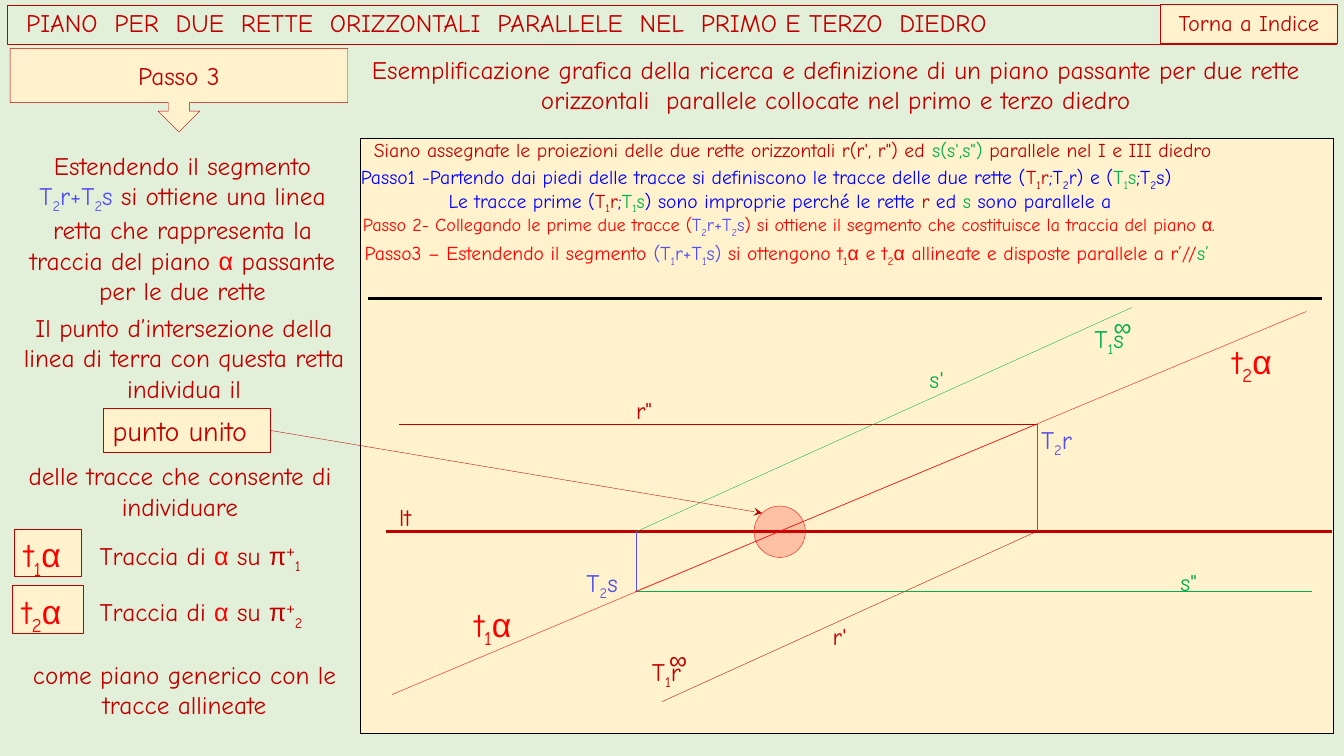
from itertools import groupby

from lxml import etree
from pptx import Presentation
from pptx import util as u
from pptx.dml.color import RGBColor
from pptx.enum import shapes, text
from pptx.oxml import ns

# Grid: every length is a number of columns or rows, ten to the inch
CELL = u.Inches(0.1)
COLUMNS, ROWS = 133.33, 75

PALE_GREEN = RGBColor(0xE2, 0xF0, 0xD9)
CREAM = RGBColor(0xFF, 0xF2, 0xCC)
DARK_RED = RGBColor(0xC0, 0x00, 0x00)
RED = RGBColor(0xFF, 0x00, 0x00)
GREEN = RGBColor(0x00, 0xB0, 0x50)
VIOLET = RGBColor(0x54, 0x50, 0xEE)
BLUE = RGBColor(0x00, 0x00, 0xFF)
BLACK = RGBColor(0x00, 0x00, 0x00)

FONT, SYMBOL_FONT = "Comic Neue", "Arial"
SYMBOLS = "απ∞"
BASELINES = {"_": -25000, "^": 30000}  # marks before a lowered or raised character
THIN = 0.25
LEFT, CENTER = text.PP_ALIGN.LEFT, text.PP_ALIGN.CENTER


def grid(*cells):
    return [round(cell * CELL) for cell in cells]


def styled_pieces(marked):
    """Split marked text into (text, font name, baseline) pieces."""
    characters, baseline = [], 0
    for character in marked:
        if character in BASELINES:
            baseline = BASELINES[character]
            continue
        font = SYMBOL_FONT if character in SYMBOLS or baseline > 0 else FONT
        characters.append((character, font, baseline))
        baseline = 0
    for (font, baseline), piece in groupby(characters, key=lambda item: item[1:]):
        yield "".join(item[0] for item in piece), font, baseline


def write(shape, parts, size, align=LEFT, anchor=text.MSO_ANCHOR.TOP, grow=True, wrap=True):
    """Fill a shape with (marked text, colour) parts."""
    frame = shape.text_frame
    frame.word_wrap = wrap
    frame.vertical_anchor = anchor
    frame.auto_size = (text.MSO_AUTO_SIZE.SHAPE_TO_FIT_TEXT if grow
                       else text.MSO_AUTO_SIZE.NONE)
    paragraph = frame.paragraphs[0]
    paragraph.alignment = align
    for marked, color in parts:
        for piece, font, baseline in styled_pieces(marked):
            run = paragraph.add_run()
            run.text = piece
            run.font.name = font
            run.font.size = u.Pt(size)
            run.font.color.rgb = color
            if baseline:
                run._r.get_or_add_rPr().set("baseline", str(baseline))


def add_label(parent, box, parts, size=18, align=LEFT, inset=True, wrap=True):
    label = parent.add_textbox(*grid(*box))
    if not inset:
        frame = label.text_frame
        frame.margin_left = frame.margin_right = frame.margin_top = frame.margin_bottom = 0
    write(label, parts, size, align, wrap=wrap)


def add_panel(parent, kind, box, fill=CREAM, line=DARK_RED, width=THIN):
    panel = parent.add_shape(kind, *grid(*box))
    panel.shadow.inherit = False
    panel.fill.solid()
    panel.fill.fore_color.rgb = fill
    panel.line.color.rgb = line
    panel.line.width = u.Pt(width)
    return panel


def add_line(parent, start, end, color, width=THIN):
    line = parent.add_connector(shapes.MSO_CONNECTOR.STRAIGHT, *grid(*start, *end))
    line.line.color.rgb = color
    line.line.width = u.Pt(width)
    etree.SubElement(line._element.spPr, ns.qn("a:effectLst"))
    return line


def add_header(slide):
    title = slide.shapes.title
    title.left, title.top, title.width, title.height = grid(0.7, 0.5, 131.9, 3.9)
    title.line.color.rgb = DARK_RED
    title.line.width = u.Pt(THIN)
    title.text_frame.margin_left = round(1.9 * CELL)
    write(title, [("PIANO  PER  DUE  RETTE  ORIZZONTALI  PARALLELE  NEL  PRIMO E TERZO  DIEDRO",
                   DARK_RED)], 18, anchor=text.MSO_ANCHOR.MIDDLE, grow=False)
    title.text_frame.paragraphs[0].line_spacing = 0.9

    step = add_panel(slide.shapes, shapes.MSO_SHAPE.DOWN_ARROW_CALLOUT, (1, 4.8, 33.5, 8.3))
    write(step, [("Passo 3", DARK_RED)], 18, CENTER, text.MSO_ANCHOR.MIDDLE, grow=False)
    index = add_panel(slide.shapes, shapes.MSO_SHAPE.RECTANGLE, (115.1, 0.4, 17.6, 3.9))
    write(index, [("Torna a Indice", DARK_RED)], 16, CENTER)
    add_label(slide.shapes, (33.7, 4.9, 98.4, 7.1), [
        ("Esemplificazione grafica della ricerca e definizione di un piano passante per due "
         "rette orizzontali  parallele collocate nel primo e terzo diedro", DARK_RED)],
        align=CENTER)


def add_explanation(slide):
    """Left column; returns the box from which the arrow starts."""
    paragraphs = [
        ((0.7, 14.4, 34.8, 16.2), [
            ("Estendendo il segmento ", DARK_RED), ("T_2r+T_2s ", VIOLET),
            ("si ottiene una linea retta che rappresenta la traccia del piano ", DARK_RED),
            ("α", RED), (" passante per le due rette", DARK_RED)]),
        ((1, 30.5, 34.5, 13.1), [
            ("Il punto d’intersezione della linea di terra con questa retta individua il",
             DARK_RED)]),
        ((0.6, 45.2, 34.5, 7.1), [("delle tracce che consente di individuare", DARK_RED)]),
        ((1.4, 64.9, 33.8, 7.1), [("come piano generico con le tracce allineate", DARK_RED)]),
    ]
    for box, parts in paragraphs:
        add_label(slide.shapes, box, parts, align=CENTER)

    # The two traces and their meaning
    for number, left, width in ((1, 1.4, 6.7), (2, 1.2, 7.1)):
        top = 46.9 + 5.6 * number
        trace = add_panel(slide.shapes, shapes.MSO_SHAPE.RECTANGLE, (left, top, width, 4.7))
        write(trace, [(f"t_{number}α", RED)], 24)
        add_label(slide.shapes, (8.9, top + 0.6, 27.3, 4.1), [
            ("Traccia di ", DARK_RED), ("α", RED), (f" su π^+_{number}", DARK_RED)])

    point = add_panel(slide.shapes, shapes.MSO_SHAPE.RECTANGLE, (10.2, 40.5, 16.6, 4.4))
    write(point, [("punto unito", DARK_RED)], 20)
    return point


def add_steps(parent):
    add_label(parent, (37.1, 13.7, 93.4, 2.4), [
        ("Siano assegnate le proiezioni delle due rette orizzontali r(r', r\") ed ", DARK_RED),
        ("s(s',s\") ", GREEN), ("parallele nel I e III diedro", DARK_RED)],
        14, inset=False, wrap=False)
    add_label(parent, (35.8, 16.4, 94, 2.4), [
        ("Passo1 -Partendo dai piedi delle tracce si definiscono le tracce delle due rette (",
         BLUE), ("T_1r", DARK_RED), (";T_2r) e (", BLUE), ("T_1s", GREEN), (";T_2s)", BLUE)],
        14, inset=False)
    add_label(parent, (44.5, 18.7, 80.1, 2.4), [
        ("Le tracce prime (", BLUE), ("T_1r", DARK_RED), (";", BLUE), ("T_1s", GREEN),
        (") sono improprie perché le rette ", BLUE), ("r", DARK_RED), (" ed ", BLUE),
        ("s", GREEN), (" sono parallele a", BLUE)], 14, inset=False)
    add_label(parent, (36, 21.2, 95.5, 2.2), [
        ("Passo 2- Collegando le prime due tracce (", RED), ("T_2r+T_2s", VIOLET),
        (") si ottiene il segmento che costituisce la traccia del piano α.", RED)],
        13, inset=False)
    add_label(parent, (35.2, 23.4, 94.4, 3.4), [
        ("Passo3 – Estendendo il segmento ", RED), ("(T_1r+T_1s) ", VIOLET),
        ("si ottengono t_1α e t_2α allineate e disposte parallele a r’//", RED),
        ("s’", GREEN)], 14)


def add_projections(parent):
    # Ground line, projections of r and s, and the segment joining their traces
    for start, end, color, width in (
            ((131.2, 29.6), (36.5, 29.6), BLACK, 0),
            ((38.3, 52.7), (132.1, 52.7), DARK_RED, 0),
            ((39.6, 42.1), (102.9, 42.1), DARK_RED, THIN),
            ((102.9, 42.1), (102.9, 52.7), VIOLET, THIN),
            ((102.9, 52.7), (65.7, 69.6), DARK_RED, THIN),
            ((63.1, 58.7), (130.2, 58.7), GREEN, THIN),
            ((63.1, 58.7), (63.1, 52.8), VIOLET, THIN),
            ((112.3, 30.5), (63, 52.8), GREEN, THIN),
            ((63, 58.7), (102.8, 42.1), RED, THIN)):
        add_line(parent, start, end, color, width)

    for name, left, top, color in (
            ("r\"", 63.1, 39.3, DARK_RED), ("r'", 82.6, 61.7, DARK_RED),
            ("s\"", 117.1, 56.3, GREEN), ("s'", 92.2, 36.2, GREEN),
            ("lt", 39.6, 49.9, DARK_RED)):
        add_label(parent, (left, top, 2.2, 2.9), [(name, color)], 17, inset=False, wrap=False)

    for name, left, top, width, color in (
            ("T_2r", 102.3, 41.6, 6.3, VIOLET), ("T_2s", 57.2, 55.8, 6.3, VIOLET),
            ("T_1s", 107.6, 31.6, 6.3, GREEN), ("∞", 109.5, 30.4, 3.1, GREEN),
            ("T_1r", 63.7, 64.6, 6.3, DARK_RED), ("∞", 65.4, 63.4, 3.1, DARK_RED)):
        add_label(parent, (left, top, width, 4), [(name, color)])


def add_plane_traces(slide, point):
    add_line(slide.shapes, (77.6, 52.6), (129.6, 30.9), RED)
    add_line(slide.shapes, (38.9, 68.9), (77.6, 52.6), RED)
    for number, left, top in ((1, 46.1, 59.4), (2, 121.3, 33.3)):
        add_label(slide.shapes, (left, top, 7.1, 4.7), [(f"t_{number}α", RED)], 24)

    # Highlighted common point and the arrow leading to it
    spot = add_panel(slide.shapes, shapes.MSO_SHAPE.OVAL, (74.8, 50.2, 5.1, 5.1), RED, RED)
    color = spot._element.spPr.find(ns.qn("a:solidFill"))[0]
    etree.SubElement(color, ns.qn("a:alpha"), val="20000")
    arrow = add_line(slide.shapes, (26.8, 42.7), (75.6, 50.9), DARK_RED)
    arrow.begin_connect(point, 3)
    etree.SubElement(arrow.line._get_or_add_ln(), ns.qn("a:tailEnd"), type="stealth")


def main():
    presentation = Presentation()
    presentation.slide_width, presentation.slide_height = grid(COLUMNS, ROWS)
    slide = presentation.slides.add_slide(presentation.slide_layouts[5])
    slide.background.fill.solid()
    slide.background.fill.fore_color.rgb = PALE_GREEN

    add_header(slide)
    point = add_explanation(slide)
    diagram = slide.shapes.add_group_shape().shapes
    add_panel(diagram, shapes.MSO_SHAPE.RECTANGLE, (35.8, 13.7, 96.5, 59.1), line=BLACK, width=0)
    add_projections(diagram)
    add_steps(diagram)
    add_plane_traces(slide, point)
    presentation.save("out.pptx")


if __name__ == "__main__":
    main()
